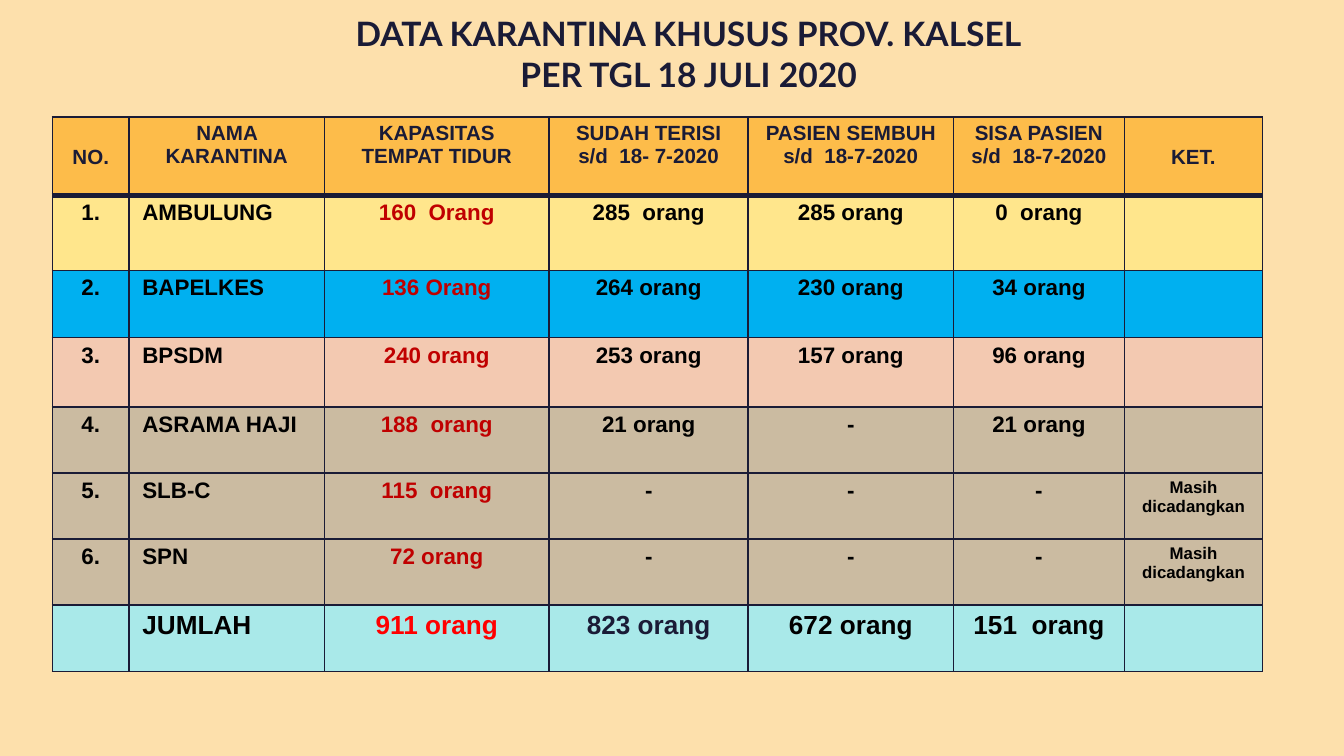
from dataclasses import dataclass
from lxml.etree import SubElement
from pptx import Presentation
from pptx.dml.color import RGBColor as Rgb
from pptx.enum.text import MSO_ANCHOR as Anchor, PP_ALIGN as Align
from pptx.oxml.ns import qn
from pptx.util import Cm, Pt


@dataclass(frozen=True)
class Theme:
    page: str = "FDE0AC"
    ink: str = "1A1B36"
    black: str = "000000"
    dark_red: str = "C00000"
    red: str = "FF0000"
    head: str = "FDBC4A"
    yellow: str = "FFE68C"
    blue: str = "00B0F0"
    pink: str = "F3C9B1"
    tan: str = "CBBBA1"
    aqua: str = "A9E9E9"
    title_font: str = "Lato"
    font: str = "Arial"
    title_size: int = 18
    head_size: int = 11
    body_size: int = 12
    total_size: int = 14
    note_size: int = 9


theme = Theme()


def style(frame, font, size, color, align):
    for para in frame.paragraphs:
        para.alignment = align
        for run in para.runs:
            run.font.name = font
            run.font.size = Pt(size)
            run.font.bold = True
            run.font.color.rgb = Rgb.from_string(color)


def border(cell, top, bottom):
    props = cell._tc.get_or_add_tcPr()
    sides = {"a:lnL": 1, "a:lnR": 1, "a:lnT": top, "a:lnB": bottom}
    for spot, (tag, width) in enumerate(sides.items()):
        line = SubElement(props, qn(tag), w=str(Pt(width)))
        fill = SubElement(line, qn("a:solidFill"))
        SubElement(fill, qn("a:srgbClr"), val=theme.ink)
        props.insert(spot, line)  # borders come before the fill


# Slide
deck = Presentation()
deck.slide_width, deck.slide_height = Cm(25.4), Cm(14.29)
slide = deck.slides.add_slide(deck.slide_layouts[6])
slide.background.fill.solid()
slide.background.fill.fore_color.rgb = Rgb.from_string(theme.page)

# Title
title = slide.shapes.add_textbox(Cm(1.6), 0, Cm(22.83), Cm(1.83)).text_frame
title.word_wrap = True
title.vertical_anchor = Anchor.TOP
title.margin_left = title.margin_right = Cm(0.25)
title.margin_top = title.margin_bottom = Cm(0.25)
title.paragraphs[0].text = "DATA KARANTINA KHUSUS PROV. KALSEL\vPER TGL 18 JULI 2020"
style(title, theme.title_font, theme.title_size, theme.ink, Align.CENTER)

# Table content: row fill, then cell texts
data = [
    (theme.head, ["NO.", "NAMA KARANTINA", "KAPASITAS\nTEMPAT TIDUR",
                  "SUDAH TERISI\ns/d  18- 7-2020", "PASIEN SEMBUH\ns/d  18-7-2020",
                  "SISA PASIEN\ns/d  18-7-2020", "KET."]),
    (theme.yellow, ["1.", "AMBULUNG", "160  Orang", "285  orang", "285 orang", "0  orang", ""]),
    (theme.blue, ["2.", "BAPELKES", "136 Orang", "264 orang", "230 orang", "34 orang", ""]),
    (theme.pink, ["3.", "BPSDM", "240 orang", "253 orang", "157 orang", "96 orang", ""]),
    (theme.tan, ["4.", "ASRAMA HAJI", "188  orang", "21 orang", "-", "21 orang", ""]),
    (theme.tan, ["5.", "SLB-C", "115  orang", "-", "-", "-", "Masih dicadangkan"]),
    (theme.tan, ["6.", "SPN", "72 orang", "-", "-", "-", "Masih dicadangkan"]),
    (theme.aqua, ["", "JUMLAH", "911 orang", "823 orang", "672 orang", "151  orang", ""]),
]
widths = [1.45, 3.69, 4.25, 3.76, 3.88, 3.23, 2.61]
heights = [1.48, 1.42, 1.27, 1.31] + [1.25] * 4
last = len(data) - 1
name, beds, used, note = 1, 2, 3, 6

# Table grid
table = slide.shapes.add_table(len(data), len(widths), Cm(0.99), Cm(2.21),
                               Cm(sum(widths)), Cm(sum(heights))).table
table.first_row = table.horz_banding = False
for col, width in zip(table.columns, widths):
    col.width = Cm(width)
for row, height in zip(table.rows, heights):
    row.height = Cm(height)

# Table cells
for r, (fill, texts) in enumerate(data):
    for c, text in enumerate(texts):
        cell = table.cell(r, c)
        cell.fill.solid()
        cell.fill.fore_color.rgb = Rgb.from_string(fill)
        cell.margin_left = cell.margin_right = Cm(0.25)
        cell.margin_top = cell.margin_bottom = Cm(0.1)
        border(cell, 3 if r == 1 else 1, 3 if r == 0 else 1)

        size, color, align = theme.body_size, theme.black, Align.CENTER
        if r == 0:
            size, color = theme.head_size, theme.ink
            if c in (0, note):  # one-line heads sit on the second line
                cell.margin_top = Cm(0.54)
        elif c == name:
            align = Align.LEFT
        elif c == beds:
            color = theme.red if r == last else theme.dark_red
        elif c == used and r == last:
            color = theme.ink
        elif c == note:
            size = theme.note_size
        if r == last:
            size = theme.total_size
        cell.text_frame.text = text
        style(cell.text_frame, theme.font, size, color, align)

deck.save("out.pptx")
